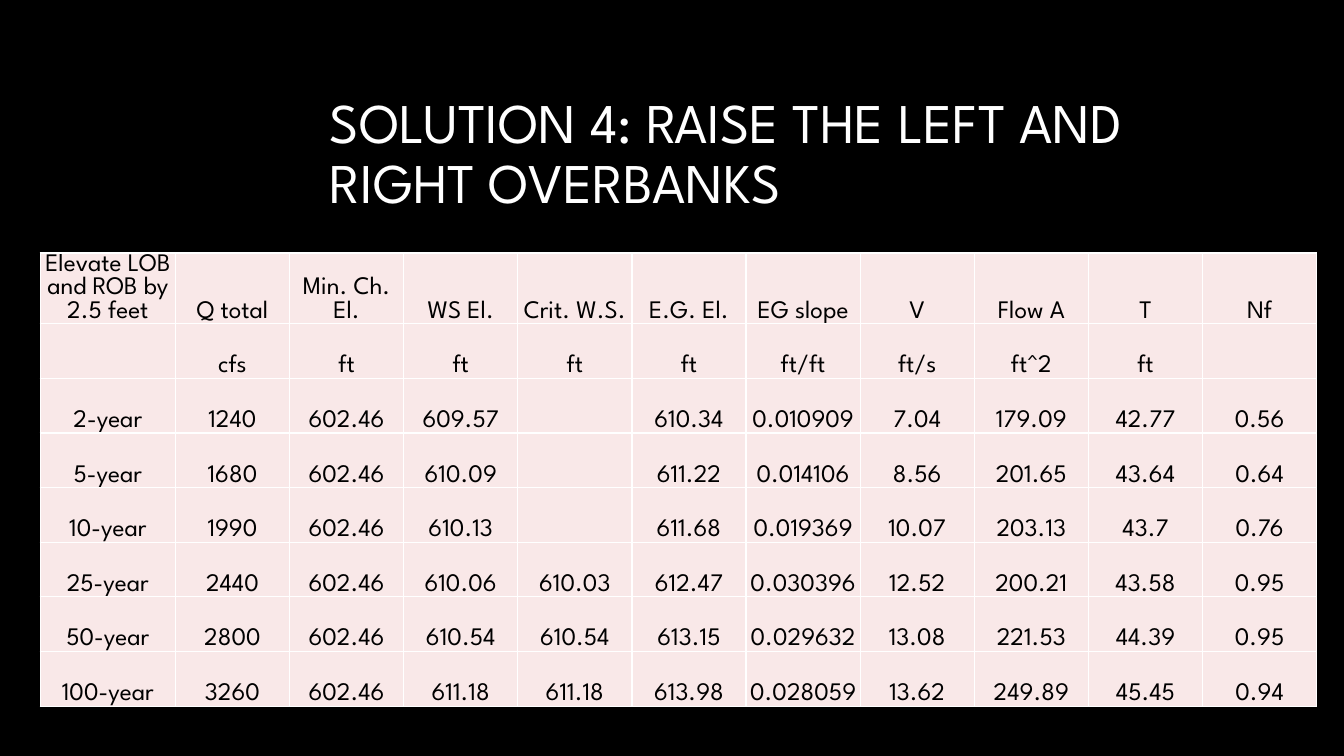
from dataclasses import dataclass

from lxml import etree
from pptx import Presentation
from pptx.dml.color import RGBColor
from pptx.enum.text import MSO_ANCHOR, MSO_AUTO_SIZE, PP_ALIGN
from pptx.oxml.ns import qn
from pptx.util import Inches, Pt

MIDDLE, BOTTOM = MSO_ANCHOR.MIDDLE, MSO_ANCHOR.BOTTOM
LEFT, CENTER = PP_ALIGN.LEFT, PP_ALIGN.CENTER
NO_AUTOFIT = MSO_AUTO_SIZE.NONE
TITLE_ONLY = 5


@dataclass(frozen=True)
class Theme:
    font: str = "League Spartan"
    background: str = "000000"
    title_color: str = "FFFFFF"
    cell_fill: str = "F9E8E8"
    cell_text: str = "000000"
    border: str = "FFFFFF"
    border_width: float = 1
    title_size: int = 40
    cell_size: int = 18


THEME = Theme()
TITLE = "SOLUTION 4: RAISE THE LEFT AND RIGHT OVERBANKS"
FLOOD_ROWS = [
    ["Elevate LOB and ROB by 2.5 feet", "Q total", "Min. Ch. El.", "WS El.", "Crit. W.S.",
     "E.G. El.", "EG slope", "V", "Flow A", "T", "Nf"],
    ["", "cfs", "ft", "ft", "ft", "ft", "ft/ft", "ft/s", "ft^2", "ft", ""],
    ["2-year", "1240", "602.46", "609.57", "", "610.34", "0.010909", "7.04", "179.09", "42.77", "0.56"],
    ["5-year", "1680", "602.46", "610.09", "", "611.22", "0.014106", "8.56", "201.65", "43.64", "0.64"],
    ["10-year", "1990", "602.46", "610.13", "", "611.68", "0.019369", "10.07", "203.13", "43.7", "0.76"],
    ["25-year", "2440", "602.46", "610.06", "610.03", "612.47", "0.030396", "12.52", "200.21", "43.58", "0.95"],
    ["50-year", "2800", "602.46", "610.54", "610.54", "613.15", "0.029632", "13.08", "221.53", "44.39", "0.95"],
    ["100-year", "3260", "602.46", "611.18", "611.18", "613.98", "0.028059", "13.62", "249.89", "45.45", "0.94"],
]


def add_run(paragraph, text, size, color):
    run = paragraph.add_run()
    run.text = text
    run.font.name = THEME.font
    run.font.size = Pt(size)
    run.font.bold = False
    run.font.color.rgb = RGBColor.from_string(color)


def set_background(slide):
    fill = slide.background.fill
    fill.solid()
    fill.fore_color.rgb = RGBColor.from_string(THEME.background)


def set_title(slide, text):
    title = slide.shapes.title
    title.left, title.top = Inches(3.17), Inches(0.83)
    title.width, title.height = Inches(9.42), Inches(1.42)
    frame = title.text_frame
    frame.word_wrap = True
    frame.auto_size = NO_AUTOFIT
    frame.vertical_anchor = MIDDLE
    paragraph = frame.paragraphs[0]
    paragraph.alignment = LEFT
    paragraph.line_spacing = 0.9
    add_run(paragraph, text, THEME.title_size, THEME.title_color)


def add_cell_borders(cell):
    properties = cell._tc.get_or_add_tcPr()
    # Borders come before the fill in the cell properties
    for position, side in enumerate(("a:lnL", "a:lnR", "a:lnT", "a:lnB")):
        line = etree.Element(qn(side), w=str(Pt(THEME.border_width)))
        fill = etree.SubElement(line, qn("a:solidFill"))
        etree.SubElement(fill, qn("a:srgbClr"), val=THEME.border)
        properties.insert(position, line)


def fill_cell(cell, text):
    cell.fill.solid()
    cell.fill.fore_color.rgb = RGBColor.from_string(THEME.cell_fill)
    cell.vertical_anchor = BOTTOM
    cell.margin_left = cell.margin_right = cell.margin_top = Inches(0.01)
    cell.margin_bottom = 0
    add_cell_borders(cell)
    if text:
        paragraph = cell.text_frame.paragraphs[0]
        paragraph.alignment = CENTER
        add_run(paragraph, text, THEME.cell_size, THEME.cell_text)


def add_flood_table(slide, rows):
    width, label_width = Inches(12.66), Inches(1.34)
    column_count = len(rows[0])
    table = slide.shapes.add_table(len(rows), column_count, Inches(0.4), Inches(2.51),
                                   width, Inches(4.34)).table
    table.first_row = table.horz_banding = False

    # The label column is wider; the others share the rest
    value_width = (width - label_width) // (column_count - 1)
    for index, column in enumerate(table.columns):
        column.width = value_width if index else label_width

    for row_index, row in enumerate(rows):
        for column_index, text in enumerate(row):
            fill_cell(table.cell(row_index, column_index), text)


def main():
    presentation = Presentation()
    presentation.slide_width, presentation.slide_height = Inches(13.33), Inches(7.5)
    slide = presentation.slides.add_slide(presentation.slide_layouts[TITLE_ONLY])
    set_background(slide)
    set_title(slide, TITLE)
    add_flood_table(slide, FLOOD_ROWS)
    presentation.save("out.pptx")


if __name__ == "__main__":
    main()
